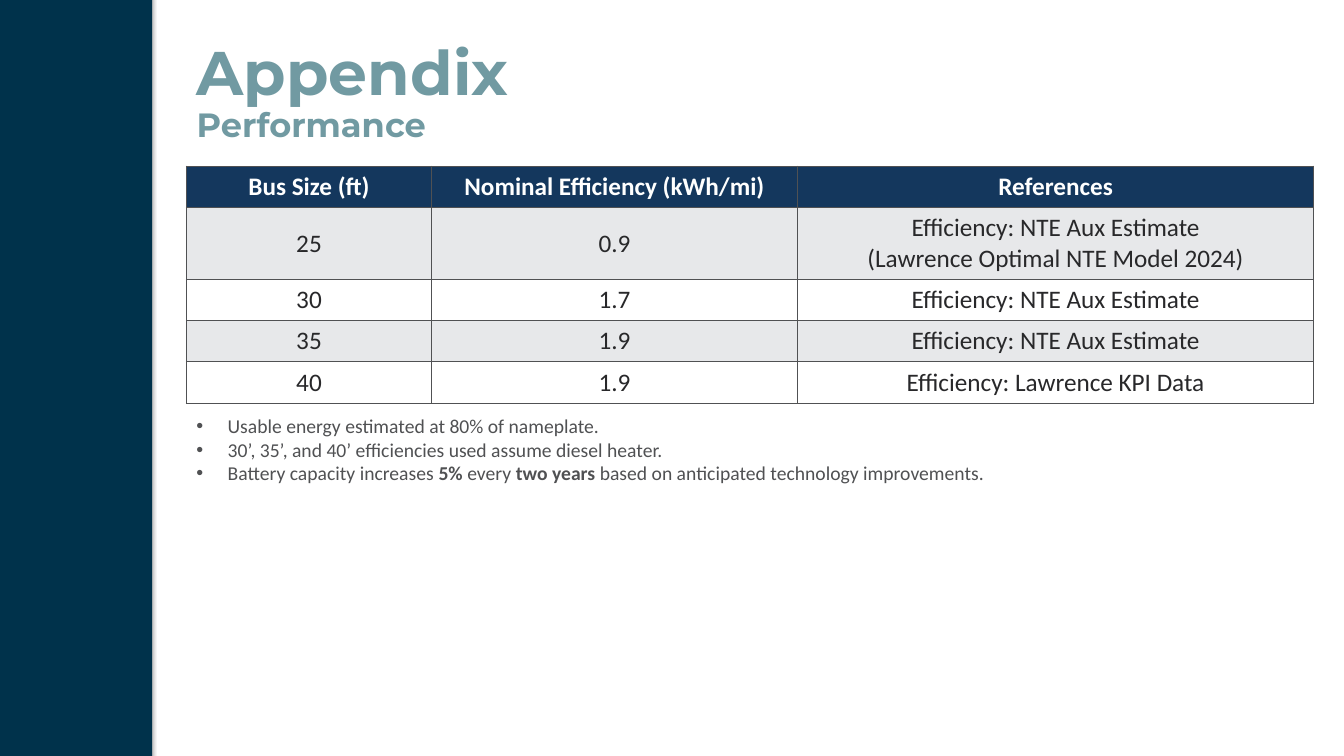
from dataclasses import dataclass
from lxml import etree
from pptx import Presentation
from pptx.dml.color import RGBColor
from pptx.enum.shapes import MSO_SHAPE
from pptx.enum.text import MSO_ANCHOR, MSO_AUTO_SIZE, PP_ALIGN
from pptx.oxml.ns import qn
from pptx.util import Inches, Pt

RECT = MSO_SHAPE.RECTANGLE
MIDDLE = MSO_ANCHOR.MIDDLE
LEFT, CENTER = PP_ALIGN.LEFT, PP_ALIGN.CENTER
FIT = MSO_AUTO_SIZE.SHAPE_TO_FIT_TEXT

TITLE = [("Appendix", 44), ("Performance", 24)]
ROWS = [
    ("Bus Size (ft)", "Nominal Efficiency (kWh/mi)", "References"),
    ("25", "0.9", "Efficiency: NTE Aux Estimate\n(Lawrence Optimal NTE Model 2024)"),
    ("30", "1.7", "Efficiency: NTE Aux Estimate"),
    ("35", "1.9", "Efficiency: NTE Aux Estimate"),
    ("40", "1.9", "Efficiency: Lawrence KPI Data"),
]
NOTES = [
    [("Usable energy estimated at 80% of nameplate.", False)],
    [("30’, 35’, and 40’ efficiencies used assume diesel heater.", False)],
    [
        ("Battery capacity increases ", False),
        ("5%", True),
        (" every ", False),
        ("two years ", True),
        ("based on anticipated technology improvements.", False),
    ],
]


@dataclass(frozen=True)
class Theme:
    head: str = "Montserrat"
    body: str = "Calibri"
    bar: str = "00324B"
    title: str = "719AA2"
    top: str = "14375D"
    bands: tuple = ("FFFFFF", "E7E8EA")
    light: str = "FFFFFF"
    dark: str = "28282A"
    gray: str = "505153"
    cell: int = 18
    note: int = 14


T = Theme()
WIDE, HIGH = 13.33, 7.5
X, W = 1.85, 11.19
COLS = (2.43, 3.63, 5.12)
ROW, LINE = 0.41, 0.3


def color(code):
    return RGBColor.from_string(code)


def style(font, name, code, size=None, bold=None):
    font.name = name
    font.color.rgb = color(code)
    font.bold = bold
    if size:
        font.size = Pt(size)


def node(parent, tag, **attrs):
    item = etree.SubElement(parent, qn(tag))
    for key, value in attrs.items():
        item.set(key, str(value))
    return item


def add_bar(slide):
    bar = slide.shapes.add_shape(
        RECT, Inches(-0.14), Inches(-0.17), Inches(1.65), Inches(7.85))
    bar.fill.solid()
    bar.fill.fore_color.rgb = color(T.bar)
    bar.line.fill.background()
    bar.shadow.inherit = False
    glow = node(bar.element.spPr.find(qn("a:effectLst")), "a:outerShdw",
                blurRad=Pt(3.1), dist=Pt(1.8), dir=5400000, rotWithShape=0)
    node(node(glow, "a:srgbClr", val="000000"), "a:alpha", val=35000)
    tree = slide.shapes.element
    tree.remove(bar.element)
    tree.insert(2, bar.element)


def add_title(slide):
    box = slide.shapes.title
    box.left, box.top = Inches(X), Inches(0.3)
    box.width, box.height = Inches(W), Inches(1.25)
    frame = box.text_frame
    frame.vertical_anchor = MIDDLE
    para = frame.paragraphs[0]
    para.alignment, para.line_spacing = LEFT, 0.9
    style(para.font, T.head, T.title, bold=True)
    for i, (text, size) in enumerate(TITLE):
        if i:
            para.add_line_break()
        run = para.add_run()
        run.text = text
        run.font.size = Pt(size)


def edge(cell):
    props = cell._tc.get_or_add_tcPr()
    for side in "LRTB":
        line = node(props, f"a:ln{side}", w=Pt(1))
        node(node(line, "a:solidFill"), "a:srgbClr", val=T.gray)


def add_grid(slide):
    tall = [ROW + LINE * max(t.count("\n") for t in row) for row in ROWS]
    grid = slide.shapes.add_table(
        len(ROWS), len(COLS), Inches(X), Inches(1.65),
        Inches(W), Inches(sum(tall))).table
    for col, width in zip(grid.columns, COLS):
        col.width = Inches(width)
    for r, row in enumerate(ROWS):
        grid.rows[r].height = Inches(tall[r])
        for c, text in enumerate(row):
            cell = grid.cell(r, c)
            cell.text = text
            cell.vertical_anchor = MIDDLE
            edge(cell)
            cell.fill.solid()
            cell.fill.fore_color.rgb = color(T.bands[r % 2] if r else T.top)
            for para in cell.text_frame.paragraphs:
                para.alignment = CENTER
                style(para.font, T.body, T.dark if r else T.light, T.cell, r == 0)


def add_notes(slide):
    box = slide.shapes.add_textbox(
        Inches(X), Inches(4.06), Inches(8.1), Inches(0.81))
    frame = box.text_frame
    frame.word_wrap = False
    frame.auto_size = FIT
    for i, parts in enumerate(NOTES):
        para = frame.add_paragraph() if i else frame.paragraphs[0]
        props = para._p.get_or_add_pPr()
        props.set("marL", str(Inches(0.31)))
        props.set("indent", str(Inches(-0.31)))
        node(props, "a:buFont", typeface="Arial")
        node(props, "a:buChar", char="•")
        style(para.font, T.body, T.gray, T.note)
        for text, bold in parts:
            run = para.add_run()
            run.text = text
            run.font.bold = bold


def main():
    deck = Presentation()
    deck.slide_width, deck.slide_height = Inches(WIDE), Inches(HIGH)
    slide = deck.slides.add_slide(deck.slide_layouts[5])
    add_bar(slide)
    add_title(slide)
    add_grid(slide)
    add_notes(slide)
    deck.save("out.pptx")


if __name__ == "__main__":
    main()
